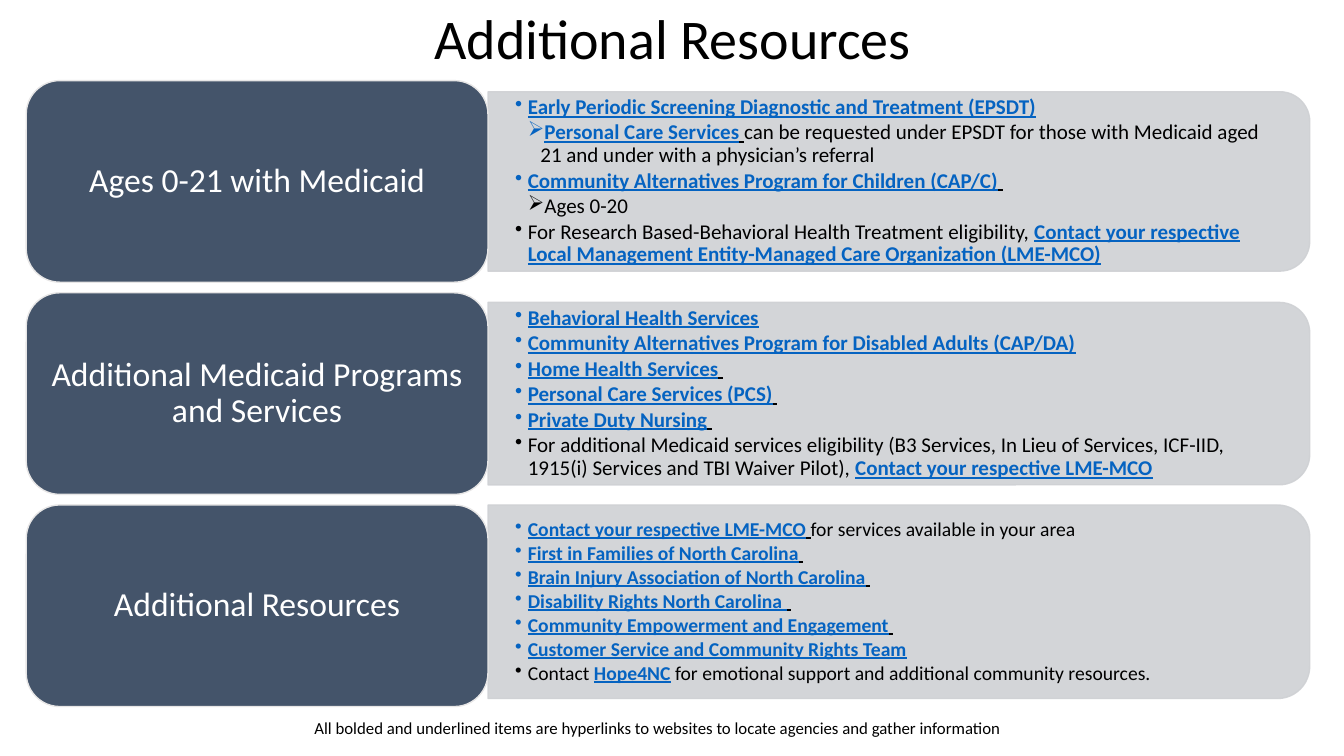
from dataclasses import dataclass

from pptx import Presentation
from pptx import util as u
from pptx.dml.color import RGBColor
from pptx.enum import shapes, text
from pptx.oxml import ns
from lxml import etree


@dataclass(frozen=True)
class Theme:
    font: str = "Calibri"
    ink: str = "000000"
    link: str = "0563C1"
    white: str = "FFFFFF"
    navy: str = "44546A"
    edge: str = "E7E6E6"
    panel: str = "CFD1D4"
    alpha: int = 90
    title: int = 40
    label: int = 24
    note: int = 12


def plain(words):
    return words, "ink", False


def link(words):
    return words, "link", True


GAP = (" ", "ink", True)  # underlined space after a link

# Each row: label, panel top, panel height, text size, list of (level, runs)
ROWS = [
    ("Ages 0-21 with Medicaid", 0.91, 1.78, 15, [
        (1, [link("Early Periodic Screening Diagnostic and Treatment (EPSDT)")]),
        (2, [link("Personal Care Services"), GAP,
             plain("can be requested under EPSDT for those with Medicaid aged "
                   "21 and under with a physician’s referral")]),
        (1, [link("Community Alternatives Program for Children (CAP/C)"), GAP]),
        (2, [plain("Ages 0-20")]),
        (1, [plain("For Research Based-Behavioral Health Treatment eligibility, "),
             link("Contact your respective Local Management Entity-Managed "
                  "Care Organization (LME-MCO)")]),
    ]),
    ("Additional Medicaid Programs and Services", 3.0, 1.81, 15, [
        (1, [link("Behavioral Health Services")]),
        (1, [link("Community Alternatives Program for Disabled Adults (CAP/DA)")]),
        (1, [link("Home Health Services"), GAP]),
        (1, [link("Personal Care Services (PCS)"), GAP]),
        (1, [link("Private Duty Nursing"), GAP]),
        (1, [plain("For additional Medicaid services eligibility (B3 Services, "
                   "In Lieu of Services, ICF-IID, 1915(i) Services and TBI "
                   "Waiver Pilot), "),
             link("Contact your respective LME-MCO")]),
    ]),
    ("Additional Resources", 5.01, 1.92, 14, [
        (1, [link("Contact your respective LME-MCO"), GAP,
             plain("for services available in your area")]),
        (1, [link("First in Families of North Carolina"), GAP]),
        (1, [link("Brain Injury Association of North Carolina"), GAP]),
        (1, [link("Disability Rights North Carolina "), GAP]),
        (1, [link("Community Empowerment and Engagement"), GAP]),
        (1, [link("Customer Service and Community Rights Team")]),
        (1, [plain("Contact "), link("Hope4NC"),
             plain(" for emotional support and additional community resources.")]),
    ]),
]


def put(obj, **attrs):
    for name, value in attrs.items():
        setattr(obj, name, value)


class Deck:
    def __init__(self, theme):
        self.theme = theme
        self.prs = Presentation()
        put(self.prs, slide_width=u.Inches(13.33), slide_height=u.Inches(7.5))
        self.slide = self.prs.slides.add_slide(self.prs.slide_layouts[5])

    def color(self, name):
        return RGBColor.from_string(getattr(self.theme, name))

    def run(self, para, words, size, hue="ink", bold=False):
        run = para.add_run()
        run.text = words
        put(run.font, name=self.theme.font, size=u.Pt(size),
            bold=bold, underline=bold)
        run.font.color.rgb = self.color(hue)

    def shape(self, kind, box, fill, line):
        shape = self.slide.shapes.add_shape(kind, *map(u.Inches, box))
        shape.shadow.inherit = False
        shape.fill.solid()
        shape.fill.fore_color.rgb = self.color(fill)
        shape.line.color.rgb = self.color(line)
        shape.line.width = u.Pt(1)
        return shape

    def title(self, words, box):
        title = self.slide.shapes.title
        names = ("left", "top", "width", "height")
        put(title, **dict(zip(names, map(u.Inches, box))))
        put(title.text_frame, word_wrap=True, auto_size=text.MSO_AUTO_SIZE.NONE,
            vertical_anchor=text.MSO_ANCHOR.TOP)
        para = title.text_frame.paragraphs[0]
        put(para, alignment=text.PP_ALIGN.CENTER, line_spacing=0.9)
        self.run(para, words, self.theme.title)

    def label(self, words, box):
        kind = shapes.MSO_SHAPE.ROUNDED_RECTANGLE
        shape = self.shape(kind, box, "navy", "edge")
        put(shape.text_frame, word_wrap=True,
            vertical_anchor=text.MSO_ANCHOR.MIDDLE)
        para = shape.text_frame.paragraphs[0]
        put(para, alignment=text.PP_ALIGN.CENTER, line_spacing=0.9)
        self.run(para, words, self.theme.label, "white")

    def panel(self, left, top, width, height):
        # Turned a quarter, so its own width and height are swapped
        box = (left + (width - height) / 2, top + (height - width) / 2,
               height, width)
        kind = shapes.MSO_SHAPE.ROUND_2_SAME_RECTANGLE
        shape = self.shape(kind, box, "panel", "panel")
        shape.rotation = 90
        for node in shape.element.iter(ns.qn("a:srgbClr")):
            alpha = etree.SubElement(node, ns.qn("a:alpha"))
            alpha.set("val", str(self.theme.alpha * 1000))

    def bullet(self, para, level):
        props = para._p.get_or_add_pPr()
        props.set("marL", str(u.Inches(0.125 * level)))
        props.set("indent", str(-u.Inches(0.125)))
        mark = etree.SubElement(props, ns.qn("a:buChar"))
        mark.set("char", "•" if level == 1 else "➢")

    def items(self, items, size, box):
        frame = self.slide.shapes.add_textbox(*map(u.Inches, box)).text_frame
        put(frame, word_wrap=True, vertical_anchor=text.MSO_ANCHOR.MIDDLE,
            margin_left=u.Inches(0.27), margin_right=u.Inches(0.27),
            margin_top=u.Inches(0.14), margin_bottom=u.Inches(0.14))
        for i, (level, runs) in enumerate(items):
            para = frame.add_paragraph() if i else frame.paragraphs[0]
            self.bullet(para, level)
            put(para, level=level, line_spacing=0.9, space_after=u.Pt(2))
            for words, hue, bold in runs:
                self.run(para, words, size, hue, bold)

    def note(self, words, box):
        frame = self.slide.shapes.add_textbox(*map(u.Inches, box)).text_frame
        frame.word_wrap = True
        self.run(frame.paragraphs[0], words, self.theme.note)


def main():
    deck = Deck(Theme())

    # Heading
    deck.title("Additional Resources", (0.92, 0.06, 11.5, 0.61))

    # Rows: panel, its list, and the label on the left
    for i, (label, top, high, size, items) in enumerate(ROWS):
        deck.panel(4.84, top, 8.15, high)
        deck.items(items, size, (4.84, top + 0.09, 8.06, high - 0.18))
        deck.label(label, (0.26, 0.8 + 2.105 * i, 4.58, 2))

    # Footnote
    deck.note("All bolded and underlined items are hyperlinks to websites "
              "to locate agencies and gather information",
              (3.02, 7.07, 7.09, 0.3))

    deck.prs.save("out.pptx")


if __name__ == "__main__":
    main()
